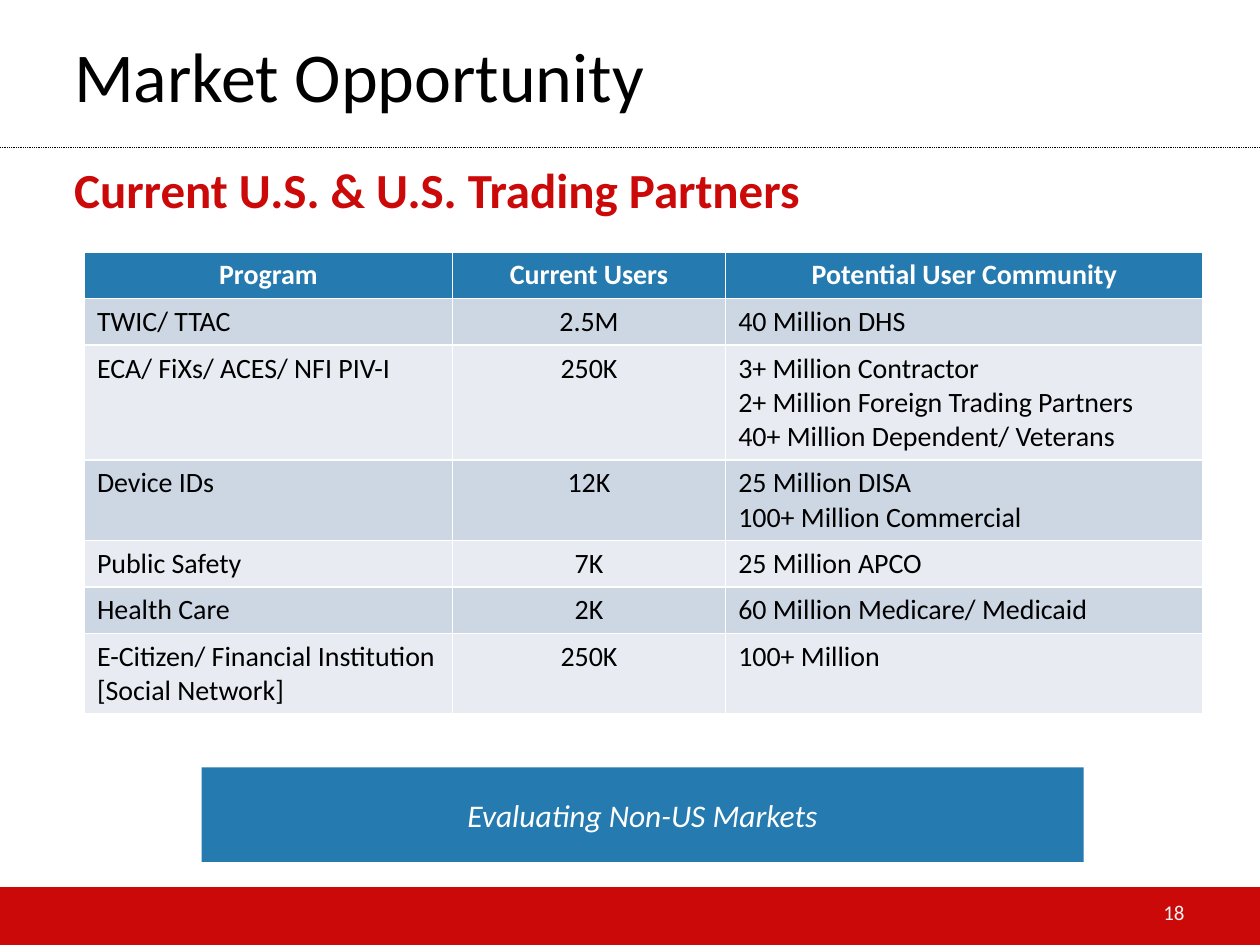
from lxml import etree
from pptx import Presentation
from pptx.dml.color import RGBColor
from pptx.enum import dml, shapes, text
from pptx.oxml import ns
from pptx.util import Inches, Pt

RED = RGBColor(0xCB, 0x09, 0x09)
BLUE = RGBColor(0x25, 0x7A, 0xAF)
BAND_DARK = RGBColor(0xCD, 0xD7, 0xE3)
BAND_LIGHT = RGBColor(0xE8, 0xEC, 0xF2)
BLACK = RGBColor(0, 0, 0)
WHITE = RGBColor(0xFF, 0xFF, 0xFF)
PALE = RGBColor(0xF2, 0xF2, 0xF2)
LEFT, CENTER, RIGHT = text.PP_ALIGN.LEFT, text.PP_ALIGN.CENTER, text.PP_ALIGN.RIGHT
TOP, MIDDLE = text.MSO_ANCHOR.TOP, text.MSO_ANCHOR.MIDDLE

TITLE = "Market Opportunity"
SUBTITLE = "Current U.S. & U.S. Trading Partners"
CALLOUT = "Evaluating Non-US Markets"
PAGE = "18"
HEADINGS = ("Program", "Current Users", "Potential User Community")
PROGRAMS = [
    ("TWIC/ TTAC", "2.5M", ["40 Million DHS"]),
    ("ECA/ FiXs/ ACES/ NFI PIV-I", "250K",
     ["3+ Million Contractor", "2+ Million Foreign Trading Partners",
      "40+ Million Dependent/ Veterans"]),
    ("Device IDs", "12K", ["25 Million DISA", "100+ Million Commercial"]),
    ("Public Safety", "7K", ["25 Million APCO"]),
    ("Health Care", "2K", ["60 Million Medicare/ Medicaid"]),
    ("E-Citizen/ Financial Institution [Social Network]", "250K", ["100+ Million"]),
]
COLUMN_WIDTHS = (2.92, 2.17, 3.79)
ROW_LINES = (1, 1, 3, 2, 1, 1, 2)
LINE_HEIGHT, ROW_PADDING = 0.27, 0.1


def write(frame, lines, size, color, align=LEFT, bold=False, italic=False):
    for i, line in enumerate(lines):
        paragraph = frame.paragraphs[0] if i == 0 else frame.add_paragraph()
        paragraph.alignment = align
        run = paragraph.add_run()
        run.text = line
        font = run.font
        font.name, font.size, font.color.rgb = "Calibri", Pt(size), color
        font.bold, font.italic = bold, italic


def add_text(slide, box, line, size, color, anchor=TOP, **style):
    frame = slide.shapes.add_textbox(*map(Inches, box)).text_frame
    frame.word_wrap = True
    frame.vertical_anchor = anchor
    write(frame, [line], size, color, **style)
    return frame


def add_block(slide, box, color):
    block = slide.shapes.add_shape(shapes.MSO_SHAPE.RECTANGLE, *map(Inches, box))
    block.shadow.inherit = False
    block.fill.solid()
    block.fill.fore_color.rgb = color
    block.line.fill.background()
    return block


def add_borders(cell):
    properties = cell._tc.get_or_add_tcPr()
    for position, side in enumerate(("lnL", "lnR", "lnT", "lnB")):
        border = etree.Element(ns.qn("a:" + side), w=str(Pt(1)))
        fill = etree.SubElement(border, ns.qn("a:solidFill"))
        etree.SubElement(fill, ns.qn("a:srgbClr"), val=str(WHITE))
        properties.insert(position, border)


def add_programs(slide):
    heights = [n * LINE_HEIGHT + ROW_PADDING for n in ROW_LINES]
    table = slide.shapes.add_table(
        len(heights), len(COLUMN_WIDTHS), Inches(0.67), Inches(2),
        Inches(sum(COLUMN_WIDTHS)), Inches(sum(heights))).table
    for column, width in zip(table.columns, COLUMN_WIDTHS):
        column.width = Inches(width)
    for row, height in zip(table.rows, heights):
        row.height = Inches(height)
    for r, values in enumerate([HEADINGS] + PROGRAMS):
        header = r == 0
        fill = BLUE if header else (BAND_LIGHT, BAND_DARK)[r % 2]
        for c, value in enumerate(values):
            cell = table.cell(r, c)
            cell.fill.solid()
            cell.fill.fore_color.rgb = fill
            add_borders(cell)
            write(cell.text_frame, value if isinstance(value, list) else [value],
                  16, WHITE if header else BLACK,
                  align=CENTER if header or c == 1 else LEFT, bold=header)


def main():
    deck = Presentation()
    deck.slide_width, deck.slide_height = Inches(10), Inches(7.5)
    slide = deck.slides.add_slide(deck.slide_layouts[6])

    # Footer band and title rule
    add_block(slide, (0, 7.04, 10, 0.46), RED)
    rule = slide.shapes.add_connector(
        shapes.MSO_CONNECTOR.STRAIGHT, 0, Inches(1.17), Inches(10), Inches(1.17))
    rule.line.color.rgb = BLACK
    rule.line.width = Pt(0.5)
    rule.line.dash_style = dml.MSO_LINE.ROUND_DOT
    etree.SubElement(rule._element.spPr, ns.qn("a:effectLst"))

    # Headings
    title = add_text(slide, (0.49, 0.37, 7.55, 0.63), TITLE, 40, BLACK, MIDDLE)
    title.paragraphs[0].line_spacing = Pt(34)
    add_text(slide, (0.49, 1.22, 8.88, 0.6), SUBTITLE, 28, RED, bold=True)

    add_programs(slide)

    # Callout and page number
    callout = add_block(slide, (1.6, 6.09, 7, 0.75), BLUE).text_frame
    callout.vertical_anchor = MIDDLE
    write(callout, [CALLOUT], 18, WHITE, align=CENTER, italic=True)
    add_text(slide, (7.17, 7.04, 2.33, 0.4), PAGE, 12, PALE, MIDDLE, align=RIGHT)

    deck.save("out.pptx")


if __name__ == "__main__":
    main()
